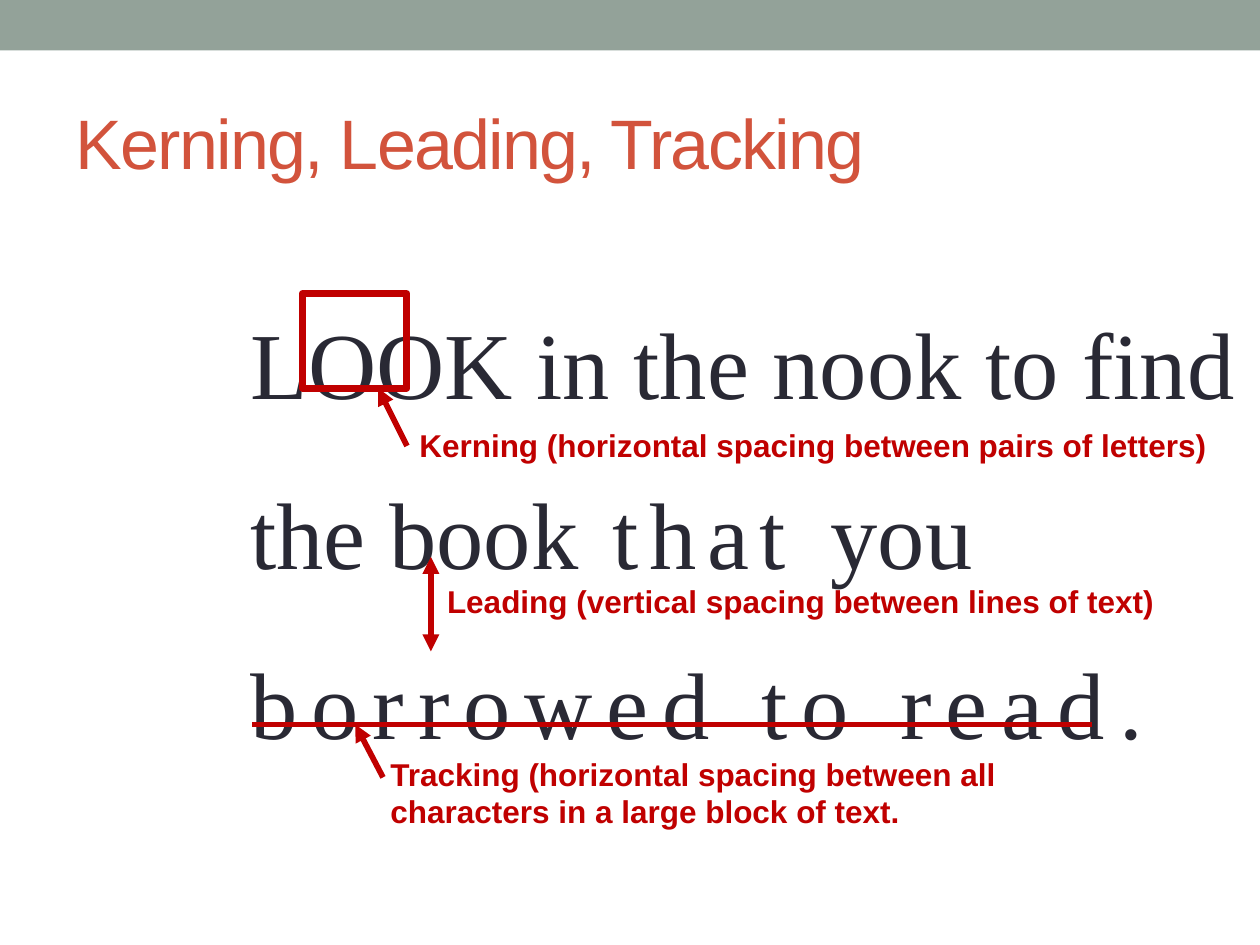
from lxml import etree
from pptx import Presentation
from pptx import util as u
from pptx.dml.color import RGBColor
from pptx.enum import shapes, text
from pptx.oxml.ns import qn

HUES = {"band": "93A299", "title": "D2533C", "ink": "292934",
        "note": "C00000", "page": "FFFFFF"}
hue = {name: RGBColor.from_string(code) for name, code in HUES.items()}

deck = Presentation()
deck.slide_width, deck.slide_height = u.Inches(10), u.Inches(7.5)
slide = deck.slides.add_slide(deck.slide_layouts[5])


def grid(*spans):
    return [u.Inches(span) for span in spans]


def style(run, font, size, color, bold=False, track=0):
    """Format a run; track is the letter spacing in points."""
    run.font.name, run.font.size = font, u.Pt(size)
    run.font.bold, run.font.color.rgb = bold, hue[color]
    if track:
        run.font._element.set("spc", str(track * 100))


# Band and title
band = slide.shapes.add_shape(shapes.MSO_SHAPE.RECTANGLE, *grid(0, 0, 10, 0.4))
band.shadow.inherit = False
band.fill.solid()
band.fill.fore_color.rgb = hue["band"]
band.line.fill.background()

title = slide.shapes.title
title.left, title.top, title.width, title.height = grid(0.5, 0.58, 9, 1.08)
frame = title.text_frame
frame.text = "Kerning, Leading, Tracking"
frame.vertical_anchor = text.MSO_ANCHOR.MIDDLE
frame.paragraphs[0].alignment = text.PP_ALIGN.LEFT
style(frame.paragraphs[0].runs[0], "Arial", 40, "title", track=-1)

# Sample sentence, with its own letter spacing in each part
group = slide.shapes.add_group_shape().shapes
sample = group.add_shape(shapes.MSO_SHAPE.RECTANGLE, *grid(1.89, 1.92, 8.08, 5))
sample.shadow.inherit = False
sample.fill.solid()
sample.fill.fore_color.rgb = hue["page"]
sample.line.fill.background()
frame = sample.text_frame
frame.word_wrap = True
frame.vertical_anchor = text.MSO_ANCHOR.TOP
para = frame.paragraphs[0]
para.alignment, para.line_spacing = text.PP_ALIGN.LEFT, 1.5
for part, track in [("L", 0), ("O", -22), ("OK in the nook to find the book", 0),
                    (" that ", 6), ("you ", 0), ("borrowed to read", 8), (".", 0)]:
    run = para.add_run()
    run.text = part
    style(run, "Times New Roman", 54, "ink", track=track)

# Frame around the kerned pair
pair = group.add_shape(shapes.MSO_SHAPE.RECTANGLE, *grid(2.4, 2.33, 0.83, 0.75))
pair.shadow.inherit = False
pair.fill.background()
pair.line.color.rgb, pair.line.width = hue["note"], u.Pt(4)

# Notes
for words, spot in [
        ("Kerning (horizontal spacing between pairs of letters)", (3.23, 3.33, 6.67, 0.4)),
        ("Leading (vertical spacing between lines of text)", (3.45, 4.57, 6.03, 0.4)),
        ("Tracking (horizontal spacing between all characters in a large block of text.",
         (3, 5.94, 5.5, 0.71))]:
    frame = group.add_textbox(*grid(*spot)).text_frame
    frame.word_wrap = True
    frame.auto_size = text.MSO_AUTO_SIZE.SHAPE_TO_FIT_TEXT
    frame.text = words
    style(frame.paragraphs[0].runs[0], "Arial", 18, "note", bold=True)

# Pointers, the leading gauge and the tracking rule
for ends, heads in [((3.23, 3.54, 3, 3.08), ["tailEnd"]),
                    ((3.42, 4.42, 3.42, 5.17), ["headEnd", "tailEnd"]),
                    ((3.04, 6.17, 2.82, 5.75), ["tailEnd"]),
                    ((2, 5.75, 8.67, 5.75), [])]:
    line = group.add_connector(shapes.MSO_CONNECTOR.STRAIGHT, *grid(*ends))
    line.line.color.rgb, line.line.width = hue["note"], u.Pt(3.25)
    props = line._element.spPr
    for head in heads:
        etree.SubElement(props.find(qn("a:ln")), qn("a:" + head), type="triangle")
    etree.SubElement(props, qn("a:effectLst"))

deck.save("out.pptx")
